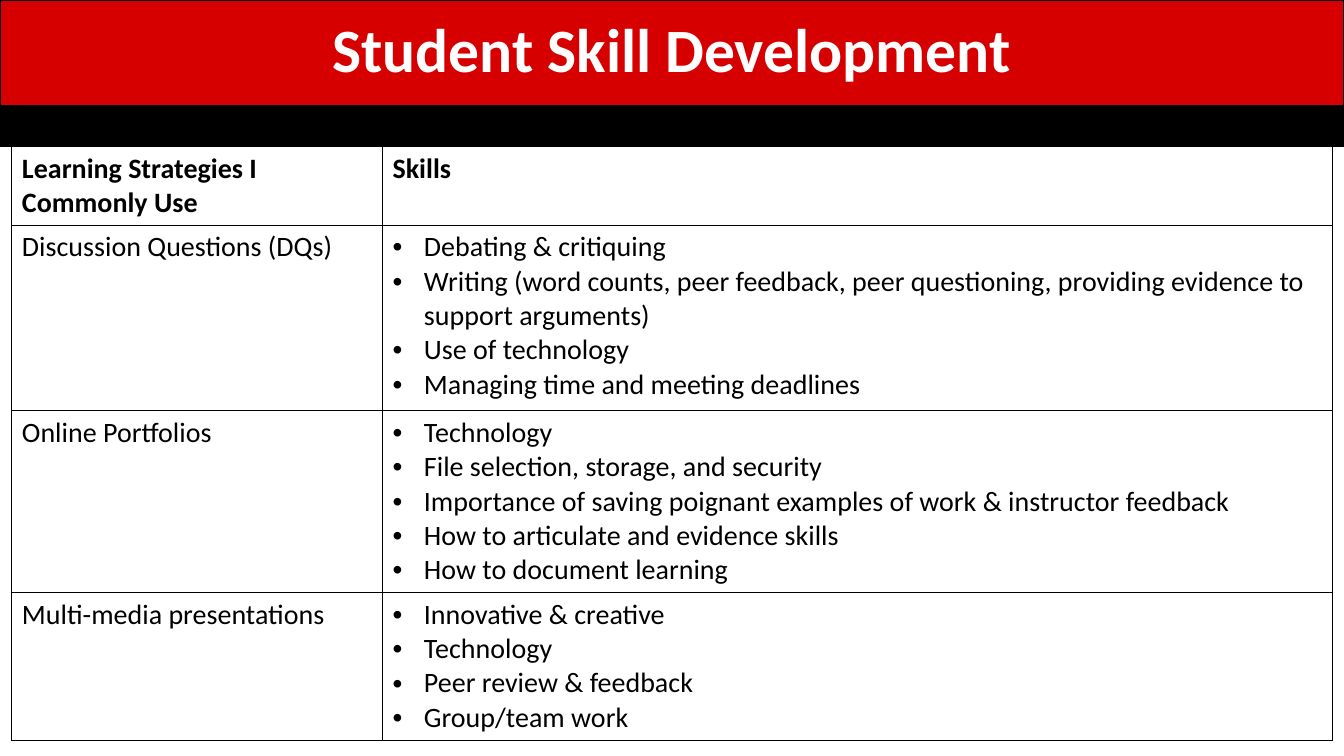
from lxml.etree import SubElement
from pptx import Presentation
from pptx.dml.color import RGBColor
from pptx.enum.shapes import MSO_SHAPE
from pptx.enum.text import MSO_ANCHOR, MSO_AUTO_SIZE, PP_ALIGN
from pptx.oxml.ns import qn
from pptx.util import Cm, Pt

TITLE = "Student Skill Development"
HEADS = ["Learning Strategies I Commonly Use", "Skills"]
SKILLS = {
    "Discussion Questions (DQs)": [
        "Debating & critiquing",
        "Writing (word counts, peer feedback, peer questioning, "
        "providing evidence to support arguments)",
        "Use of technology",
        "Managing time and meeting deadlines",
    ],
    "Online Portfolios": [
        "Technology",
        "File selection, storage, and security",
        "Importance of saving poignant examples of work & instructor feedback",
        "How to articulate and evidence skills",
        "How to document learning",
    ],
    "Multi-media presentations": [
        "Innovative & creative",
        "Technology",
        "Peer review & feedback",
        "Group/team work",
    ],
}
COLORS = {"red": "D70000", "black": "000000", "white": "FFFFFF"}
FONT = "Calibri"
WIDE, HIGH = 33.87, 19.05
BANNER, STRIP = 2.67, 1.02
LEFT = 0.3
COLS = [9.34, 23.95]
ROWS = [1.94, 4.68, 4.58, 3.72]
INDENT = 0.79


def color(name):
    return RGBColor.from_string(COLORS[name])


def write(frame, lines, size=20, bold=False, ink="black", align=PP_ALIGN.LEFT,
          space=1.0, bullet=False):
    for i, line in enumerate(lines):
        para = frame.paragraphs[0] if i == 0 else frame.add_paragraph()
        para.alignment = align
        para.line_spacing = space
        run = para.add_run()
        run.text = line
        run.font.name = FONT
        run.font.size = Pt(size)
        run.font.bold = bold
        run.font.color.rgb = color(ink)
        if bullet:
            props = para._p.get_or_add_pPr()
            props.set("marL", str(Cm(INDENT)))
            props.set("indent", str(-Cm(INDENT)))
            SubElement(props, qn("a:buFont"), typeface="Arial")
            SubElement(props, qn("a:buChar"), char="•")


def paint(shape, fill, width):
    shape.fill.solid()
    shape.fill.fore_color.rgb = color(fill)
    shape.line.color.rgb = color("black")
    shape.line.width = Pt(width)


def border(cell):
    props = cell._tc.get_or_add_tcPr()
    for side in ("lnL", "lnR", "lnT", "lnB"):
        line = SubElement(props, qn(f"a:{side}"), w=str(Pt(1)))
        fill = SubElement(line, qn("a:solidFill"))
        SubElement(fill, qn("a:srgbClr"), val=COLORS["black"])
    cell.fill.background()


def main():
    deck = Presentation()
    deck.slide_width, deck.slide_height = Cm(WIDE), Cm(HIGH)
    slide = deck.slides.add_slide(deck.slide_layouts[5])

    title = slide.shapes.title
    title.left, title.top = Cm(0), Cm(0)
    title.width, title.height = Cm(WIDE), Cm(BANNER)
    paint(title, "red", 0.75)
    title.text_frame.auto_size = MSO_AUTO_SIZE.NONE
    title.text_frame.vertical_anchor = MSO_ANCHOR.MIDDLE
    write(title.text_frame, [TITLE], size=44, bold=True, ink="white",
          align=PP_ALIGN.CENTER, space=0.9)

    strip = slide.shapes.add_shape(
        MSO_SHAPE.RECTANGLE, Cm(0), Cm(BANNER), Cm(WIDE), Cm(STRIP))
    strip.shadow.inherit = False
    paint(strip, "black", 1)

    table = slide.shapes.add_table(
        len(ROWS), len(COLS), Cm(LEFT), Cm(BANNER + STRIP),
        Cm(sum(COLS)), Cm(sum(ROWS))).table
    table.first_row = table.horz_banding = False
    for col, width in zip(table.columns, COLS):
        col.width = Cm(width)
    for row, height in zip(table.rows, ROWS):
        row.height = Cm(height)
    for cell in table.iter_cells():
        border(cell)

    for c, head in enumerate(HEADS):
        write(table.cell(0, c).text_frame, [head], bold=True)
    for r, (name, skills) in enumerate(SKILLS.items(), 1):
        write(table.cell(r, 0).text_frame, [name])
        write(table.cell(r, 1).text_frame, skills, bullet=True)

    deck.save("out.pptx")


if __name__ == "__main__":
    main()
